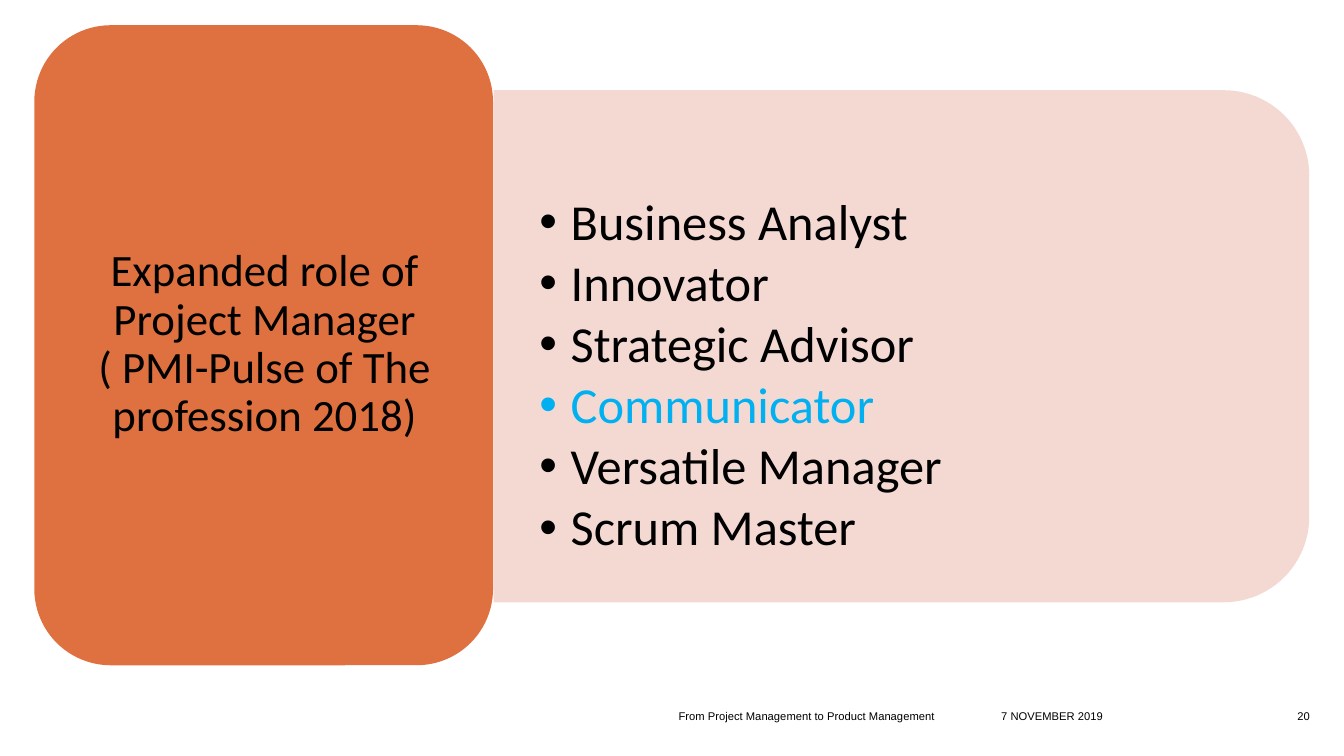
from dataclasses import dataclass

from lxml import etree
from pptx import Presentation
from pptx import util as u
from pptx.dml.color import RGBColor
from pptx.enum import shapes, text
from pptx.oxml import ns

BLACK = RGBColor(0x00, 0x00, 0x00)
SKY = RGBColor(0x00, 0xB0, 0xF0)
ORANGE = RGBColor(0xDF, 0x71, 0x40)
BLUSH = RGBColor(0xF3, 0xD5, 0xCF)

ROLES = ("Business Analyst", "Innovator", "Strategic Advisor",
         "Communicator", "Versatile Manager", "Scrum Master")
HIGHLIGHTED_ROLE = "Communicator"
FOOTER_TOP, FOOTER_HEIGHT = 6.95, 0.22


@dataclass(frozen=True)
class Box:
    left: float
    top: float
    width: float
    height: float

    def lengths(self) -> tuple:
        return tuple(u.Inches(value) for value in
                     (self.left, self.top, self.width, self.height))


@dataclass(frozen=True)
class Panel:
    box: Box
    preset: shapes.MSO_SHAPE
    color: RGBColor
    rotation: float = 0
    opacity: int = 100


@dataclass(frozen=True)
class TextBlock:
    box: Box
    lines: tuple[str, ...]
    size: int
    font: str = "Calibri"
    align: text.PP_ALIGN = text.PP_ALIGN.LEFT
    anchor: text.MSO_ANCHOR = text.MSO_ANCHOR.MIDDLE
    inset_x: float = 0
    inset_y: float = 0
    line_spacing: float = 1.0
    space_after: float = 0
    bulleted: bool = False


def footer(left: float, width: float, wording: str,
           align: text.PP_ALIGN = text.PP_ALIGN.LEFT) -> TextBlock:
    return TextBlock(Box(left, FOOTER_TOP, width, FOOTER_HEIGHT), (wording,), 8,
                     font="Arial", align=align, anchor=text.MSO_ANCHOR.BOTTOM)


PANELS = (
    Panel(Box(6.4, -0.61, 5.08, 8.09), shapes.MSO_SHAPE.ROUND_2_SAME_RECTANGLE,
          BLUSH, rotation=90, opacity=90),
    Panel(Box(0.34, 0.25, 4.55, 6.35), shapes.MSO_SHAPE.ROUNDED_RECTANGLE, ORANGE),
)
TEXT_BLOCKS = (
    TextBlock(Box(4.89, 1.76, 7.84, 3.96), ROLES, 36, inset_x=0.15, inset_y=0.07,
              line_spacing=0.9, space_after=4.7, bulleted=True),
    TextBlock(Box(0.57, 0.47, 4.11, 5.9),
              ("Expanded role of Project Manager ( PMI-Pulse of The profession 2018)",),
              32, align=text.PP_ALIGN.CENTER, inset_x=0.13, inset_y=0.07,
              line_spacing=0.9),
    footer(6.73, 3.06, "From Project Management to Product Management"),
    footer(9.93, 1.99, "7 NOVEMBER 2019"),
    footer(12.54, 0.45, "20", text.PP_ALIGN.RIGHT),
)


def draw_panel(slide, panel: Panel) -> None:
    shape = slide.shapes.add_shape(panel.preset, *panel.box.lengths())
    shape.shadow.inherit = False
    shape.rotation = panel.rotation
    shape.fill.solid()
    shape.fill.fore_color.rgb = panel.color
    shape.line.fill.background()
    if panel.opacity < 100:
        color = shape.fill._xPr.find(".//" + ns.qn("a:srgbClr"))
        etree.SubElement(color, ns.qn("a:alpha"), val=str(panel.opacity * 1000))


def add_bullet(paragraph) -> None:
    properties = paragraph._p.get_or_add_pPr()
    properties.set("marL", str(u.Inches(0.62)))
    properties.set("indent", str(u.Inches(-0.31)))
    etree.SubElement(properties, ns.qn("a:buFont"), typeface="Arial")
    etree.SubElement(properties, ns.qn("a:buChar"), char="•")


def draw_text(slide, block: TextBlock) -> None:
    text_frame = slide.shapes.add_textbox(*block.box.lengths()).text_frame
    text_frame.word_wrap = True
    text_frame.vertical_anchor = block.anchor
    text_frame.margin_left = text_frame.margin_right = u.Inches(block.inset_x)
    text_frame.margin_top = text_frame.margin_bottom = u.Inches(block.inset_y)
    text_frame.text = "\n".join(block.lines)
    for paragraph in text_frame.paragraphs:
        if block.bulleted:
            add_bullet(paragraph)
        paragraph.alignment = block.align
        paragraph.line_spacing = block.line_spacing
        paragraph.space_after = u.Pt(block.space_after)
        for run in paragraph.runs:
            run.font.name = block.font
            run.font.size = u.Pt(block.size)
            run.font.color.rgb = SKY if run.text == HIGHLIGHTED_ROLE else BLACK


def main() -> None:
    presentation = Presentation()
    presentation.slide_width = u.Inches(13.33)
    presentation.slide_height = u.Inches(7.5)
    slide = presentation.slides.add_slide(presentation.slide_layouts[6])
    for panel in PANELS:
        draw_panel(slide, panel)
    for block in TEXT_BLOCKS:
        draw_text(slide, block)
    presentation.save("out.pptx")


if __name__ == "__main__":
    main()
